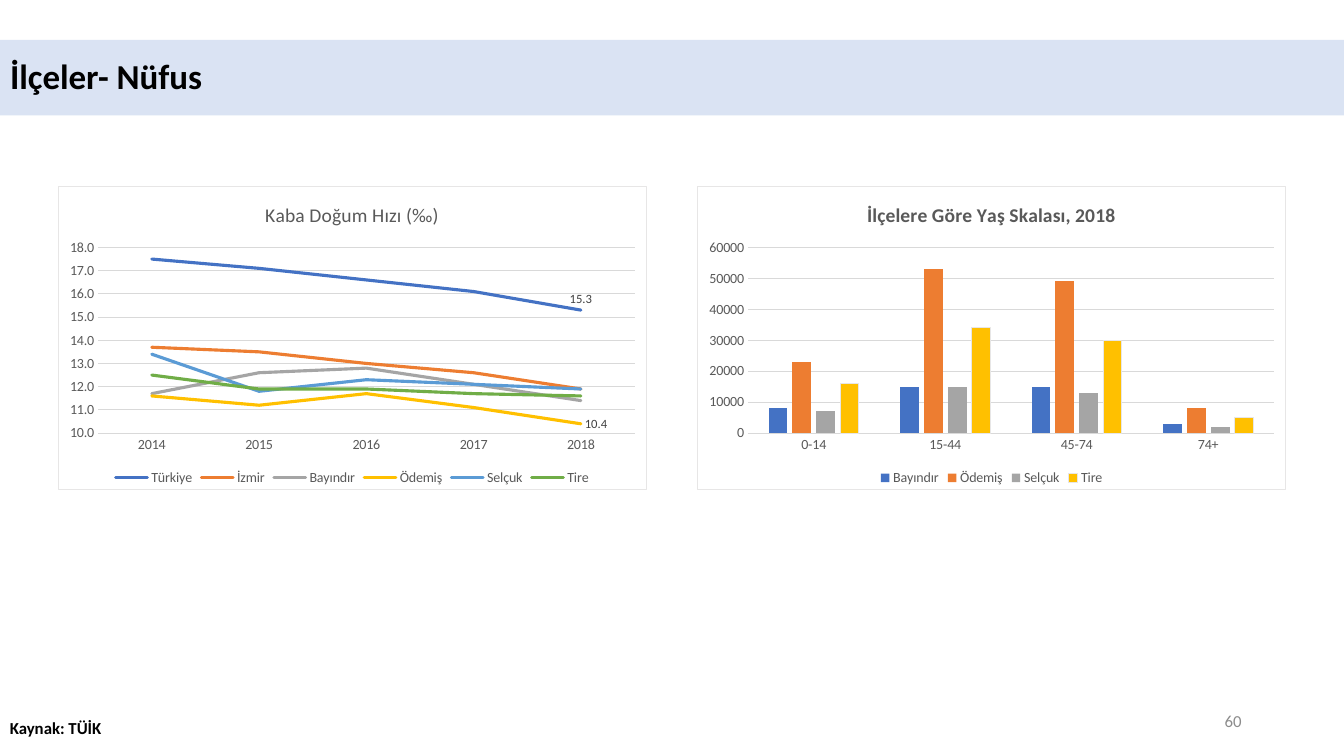
from dataclasses import dataclass

from lxml.etree import SubElement
from pptx import Presentation
from pptx.chart.data import CategoryChartData
from pptx.dml.color import RGBColor
from pptx.enum.chart import XL_CHART_TYPE as ChartType
from pptx.enum.chart import XL_LABEL_POSITION as LabelPosition
from pptx.enum.chart import XL_LEGEND_POSITION as LegendPosition
from pptx.enum.chart import XL_TICK_MARK as TickMark
from pptx.enum.text import MSO_ANCHOR as Anchor
from pptx.enum.text import PP_ALIGN as Align
from pptx.oxml import parse_xml
from pptx.oxml.ns import nsdecls, qn
from pptx.util import Emu, Pt

EMU_PER_PX = 9525
FONT = "Calibri"
GREY_TEXT, GRID, BORDER = "595959", "D9D9D9", "E7E6E6"


@dataclass
class Series:
    name: str
    values: list[float]
    color: str
    last_label: LabelPosition | None = None
    outline: str | None = None


@dataclass
class ChartPanel:
    left: int
    kind: ChartType
    title: str
    bold_title: bool
    categories: list[str]
    series: list[Series]
    number_format: str
    minimum: float
    maximum: float
    step: float


PANELS = [
    ChartPanel(
        664, ChartType.COLUMN_CLUSTERED, "İlçelere Göre Yaş Skalası, 2018", True,
        ["0-14", "15-44", "45-74", "74+"],
        [
            Series("Bayındır", [8000, 15000, 15000, 3000], "4472C4"),
            Series("Ödemiş", [23000, 53000, 49000, 8000], "ED7D31"),
            Series("Selçuk", [7000, 15000, 13000, 2000], "A5A5A5"),
            Series("Tire", [16000, 34000, 30000, 5000], "FFC000", outline=BORDER),
        ],
        "General", 0, 60000, 10000,
    ),
    ChartPanel(
        55, ChartType.LINE, "Kaba Doğum Hızı (‰)", False,
        ["2014", "2015", "2016", "2017", "2018"],
        [
            Series("Türkiye", [17.5, 17.1, 16.6, 16.1, 15.3], "4472C4", LabelPosition.ABOVE),
            Series("İzmir", [13.7, 13.5, 13.0, 12.6, 11.9], "ED7D31"),
            Series("Bayındır", [11.7, 12.6, 12.8, 12.1, 11.4], "A5A5A5"),
            Series("Ödemiş", [11.6, 11.2, 11.7, 11.1, 10.4], "FFC000", LabelPosition.RIGHT),
            Series("Selçuk", [13.4, 11.8, 12.3, 12.1, 11.9], "5B9BD5"),
            Series("Tire", [12.5, 11.9, 11.9, 11.7, 11.6], "70AD47"),
        ],
        "0.0", 10, 18, 1,
    ),
]


def px(length: int) -> Emu:
    return Emu(length * EMU_PER_PX)


def rgb(color: str) -> RGBColor:
    return RGBColor.from_string(color)


def set_font(font, size: float, color: str, bold: bool = False) -> None:
    font.name, font.size, font.bold = FONT, Pt(size), bold
    font.color.rgb = rgb(color)


def set_line(line, color: str, width: float = 0.75) -> None:
    line.color.rgb = rgb(color)
    line.width = Pt(width)


def add_text(slide, text: str, left: int, top: int, width: int, height: int,
             color: str, bold: bool, align: Align, anchor: Anchor) -> None:
    frame = slide.shapes.add_textbox(px(left), px(top), px(width), px(height)).text_frame
    frame.word_wrap = True
    frame.vertical_anchor = anchor
    paragraph = frame.paragraphs[0]
    paragraph.text, paragraph.alignment = text, align
    set_font(paragraph.font, 12, color, bold)


def add_frame(chart) -> None:
    properties = parse_xml(f'<c:spPr {nsdecls("c", "a")}/>')
    fill = SubElement(properties, qn("a:solidFill"))
    SubElement(fill, qn("a:srgbClr"), val="FFFFFF")
    line = SubElement(properties, qn("a:ln"), w=str(Pt(0.75)))
    line_fill = SubElement(line, qn("a:solidFill"))
    SubElement(line_fill, qn("a:srgbClr"), val=BORDER)
    chart.element.find(qn("c:chart")).addnext(properties)


def format_axes(chart, panel: ChartPanel) -> None:
    for axis in (chart.category_axis, chart.value_axis):
        axis.major_tick_mark = axis.minor_tick_mark = TickMark.NONE
        set_font(axis.tick_labels.font, 10, GREY_TEXT)
    set_line(chart.category_axis.format.line, GRID)
    values = chart.value_axis
    values.format.line.fill.background()
    values.minimum_scale, values.maximum_scale = panel.minimum, panel.maximum
    values.major_unit = panel.step
    values.tick_labels.number_format = panel.number_format
    values.tick_labels.number_format_is_linked = False
    set_line(values.major_gridlines.format.line, GRID)


def round_line_ends(chart) -> None:
    for series in chart.element.iter(qn("c:ser")):
        series.find(qn("c:spPr")).find(qn("a:ln")).set("cap", "rnd")


def format_series(drawn, series: Series, is_line: bool) -> None:
    if is_line:
        drawn.smooth = False
        set_line(drawn.format.line, series.color, 2.25)
    else:
        drawn.format.fill.solid()
        drawn.format.fill.fore_color.rgb = rgb(series.color)
        if series.outline:
            set_line(drawn.format.line, series.outline)
    if series.last_label is not None:
        drawn.data_labels.show_value = False
        label = drawn.points[len(series.values) - 1].data_label
        set_font(label.font, 9, "404040")
        label.position = series.last_label


def add_panel(slide, panel: ChartPanel) -> None:
    data = CategoryChartData(number_format=panel.number_format)
    data.categories = panel.categories
    for series in panel.series:
        data.add_series(series.name, series.values)
    chart = slide.shapes.add_chart(
        panel.kind, px(panel.left), px(177), px(561), px(290), data).chart
    add_frame(chart)
    set_font(chart.font, 10, "000000")

    # Title and legend
    chart.has_title = True
    chart.chart_title.include_in_layout = False
    paragraph = chart.chart_title.text_frame.paragraphs[0]
    paragraph.text = panel.title
    set_font(paragraph.font, 14, GREY_TEXT, panel.bold_title)
    chart.has_legend = True
    chart.legend.position = LegendPosition.BOTTOM
    chart.legend.include_in_layout = False
    set_font(chart.legend.font, 10, GREY_TEXT)

    # Axes and series
    format_axes(chart, panel)
    is_line = panel.kind == ChartType.LINE
    plot = chart.plots[0]
    plot.vary_by_categories = False
    for drawn, series in zip(plot.series, panel.series):
        format_series(drawn, series, is_line)
    if is_line:
        round_line_ends(chart)
    else:
        plot.gap_width, plot.overlap = 219, -27


def add_title(slide, text: str) -> None:
    title = slide.shapes.title
    title.left, title.top, title.width, title.height = px(0), px(38), px(1280), px(72)
    title.fill.solid()
    title.fill.fore_color.rgb = rgb("DAE3F3")
    title.text_frame.vertical_anchor = Anchor.MIDDLE
    paragraph = title.text_frame.paragraphs[0]
    paragraph.text, paragraph.alignment = text, Align.LEFT
    paragraph.line_spacing = 0.9
    set_font(paragraph.font, 25, "000000", True)


def main() -> None:
    presentation = Presentation()
    presentation.slide_width, presentation.slide_height = px(1280), px(720)
    slide = presentation.slides.add_slide(presentation.slide_layouts.get_by_name("Title Only"))

    add_title(slide, "İlçeler- Nüfus")
    # Source note, charts and page number
    add_text(slide, "Kaynak: TÜİK", 0, 679, 319, 29, "000000", True, Align.LEFT, Anchor.TOP)
    for panel in PANELS:
        add_panel(slide, panel)
    add_text(slide, "60", 904, 667, 288, 38, "8C8C8C", False, Align.RIGHT, Anchor.MIDDLE)

    presentation.save("out.pptx")


if __name__ == "__main__":
    main()
